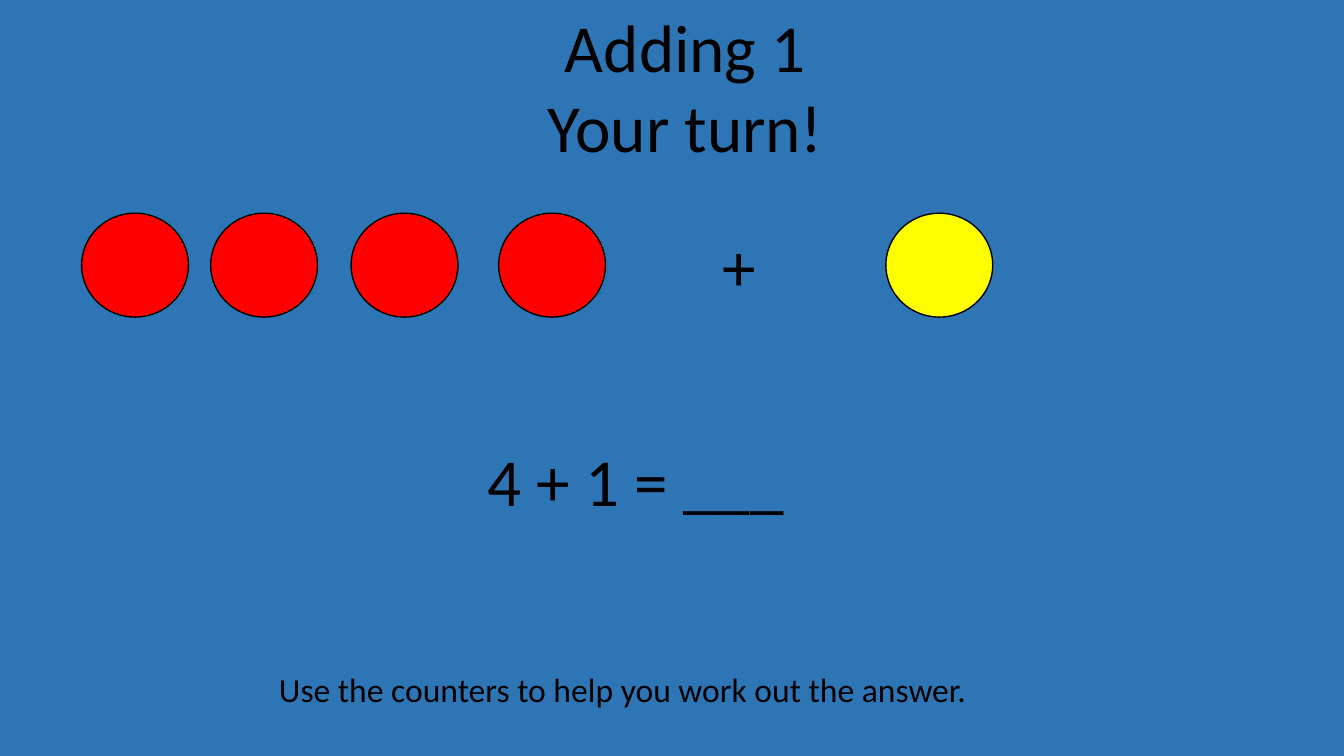
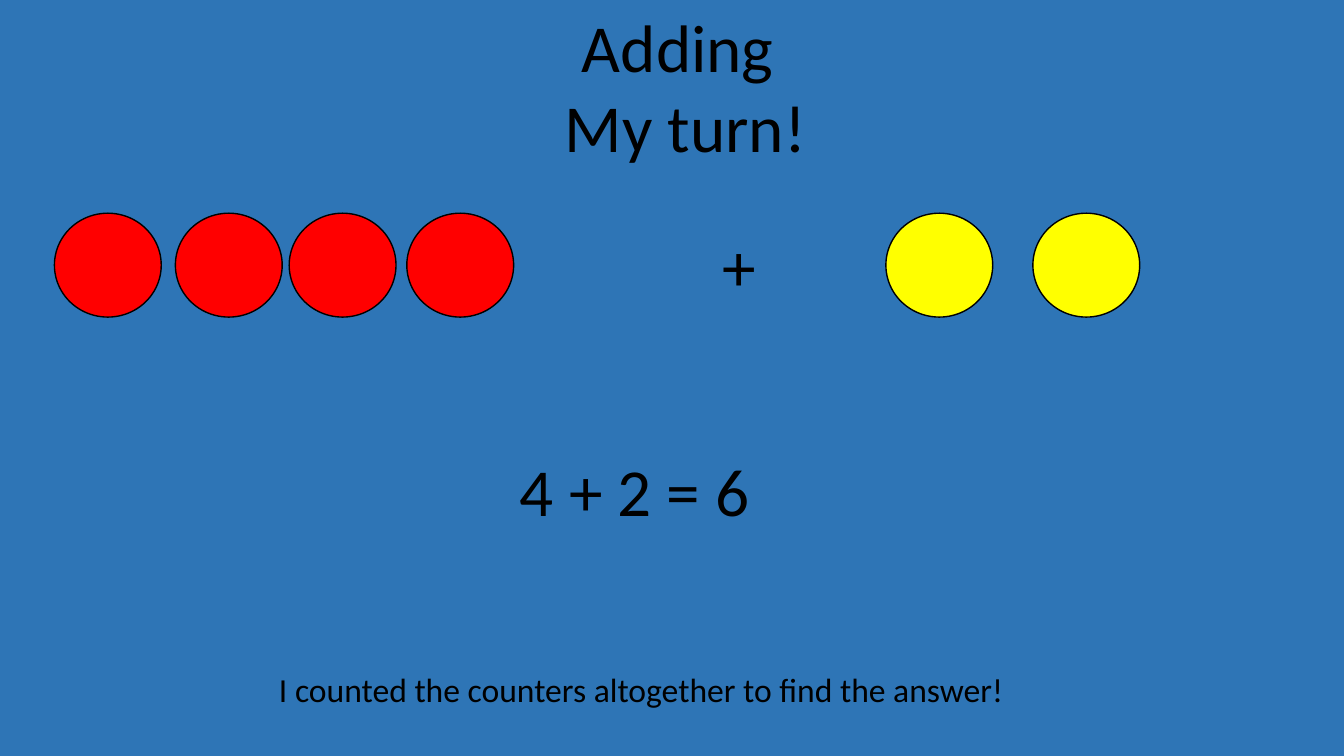
from pptx import Presentation
from pptx.dml.color import RGBColor
from pptx.enum.shapes import MSO_SHAPE
from pptx.enum.text import MSO_ANCHOR, MSO_AUTO_SIZE, PP_ALIGN
from pptx.util import Pt


def rgb(value):
    """Turn a hex string into a colour."""
    return RGBColor.from_string(value)


class Deck:
    """Hold the shared style and the current slide."""

    FONT = "Calibri"
    BLUE, BLACK, RED, YELLOW = "2E75B6", "000000", "FF0000", "FFFF00"
    LARGE, SMALL = 48, 24
    COUNTER_TOP, COUNTER_W, COUNTER_H = 152.3, 76.3, 74.2

    def __init__(self):
        """Set the slide size and the shared background."""
        self.prs = Presentation()
        self.prs.slide_width, self.prs.slide_height = Pt(960), Pt(540)
        fill = self.prs.slide_master.background.fill
        fill.solid()
        fill.fore_color.rgb = rgb(self.BLUE)
        self.s = None

    def add_slide(self, title):
        """Start a slide and format its title placeholder."""
        self.s = self.prs.slides.add_slide(self.prs.slide_layouts[5])
        sp = self.s.shapes.title
        sp.left, sp.top, sp.width, sp.height = Pt(88.6), Pt(0), Pt(802), Pt(124)
        self.set_text(sp.text_frame, title, self.LARGE, PP_ALIGN.CENTER)

    def set_text(self, tf, text, size, align):
        """Fill a text frame and format its runs."""
        tf.text = text
        tf.word_wrap = True
        tf.auto_size = MSO_AUTO_SIZE.NONE
        tf.vertical_anchor = MSO_ANCHOR.TOP
        for p in tf.paragraphs:
            p.alignment = align
            for r in p.runs:
                r.font.name = self.FONT
                r.font.size = Pt(size)
                r.font.color.rgb = rgb(self.BLACK)

    def text(self, text, x, y, w, h, size=LARGE):
        """Add a left-aligned text box."""
        sp = self.s.shapes.add_textbox(Pt(x), Pt(y), Pt(w), Pt(h))
        self.set_text(sp.text_frame, text, size, PP_ALIGN.LEFT)

    def counters(self, lefts, color):
        """Add a row of round counters at the given left edges."""
        for x in lefts:
            sp = self.s.shapes.add_shape(
                MSO_SHAPE.OVAL, Pt(x), Pt(self.COUNTER_TOP),
                Pt(self.COUNTER_W), Pt(self.COUNTER_H))
            sp.shadow.inherit = False
            sp.fill.solid()
            sp.fill.fore_color.rgb = rgb(color)
            sp.line.color.rgb = rgb(self.BLACK)
            sp.line.width = Pt(1)

    def sum_slide(self, title, reds, yellows, equation, box, caption):
        """Build one addition slide."""
        self.add_slide(title)
        self.counters(reds, self.RED)
        self.text("+", 509, 157, 124, 65.5)
        self.counters(yellows, self.YELLOW)
        self.text(equation, *box)
        self.text(caption, 192.2, 474.5, 633, 36, self.SMALL)


def main():
    """Build and save the presentation."""
    deck = Deck()
    deck.sum_slide("Adding 1\nYour turn!", [58.3, 150.5, 250.8, 356.2], [632.8],
                   "4 + 1 = ___", (341.3, 310.3, 278, 65.5),
                   "Use the counters to help you work out the answer.")
    deck.sum_slide("Adding \nMy turn!", [38.9, 125.3, 206.6, 290.6], [632.8, 737.8],
                   "4 + 2 = 6", (364.3, 317.5, 194.4, 65.5),
                   "I counted the counters altogether to find the answer!")
    deck.prs.save("out.pptx")


if __name__ == "__main__":
    main()
